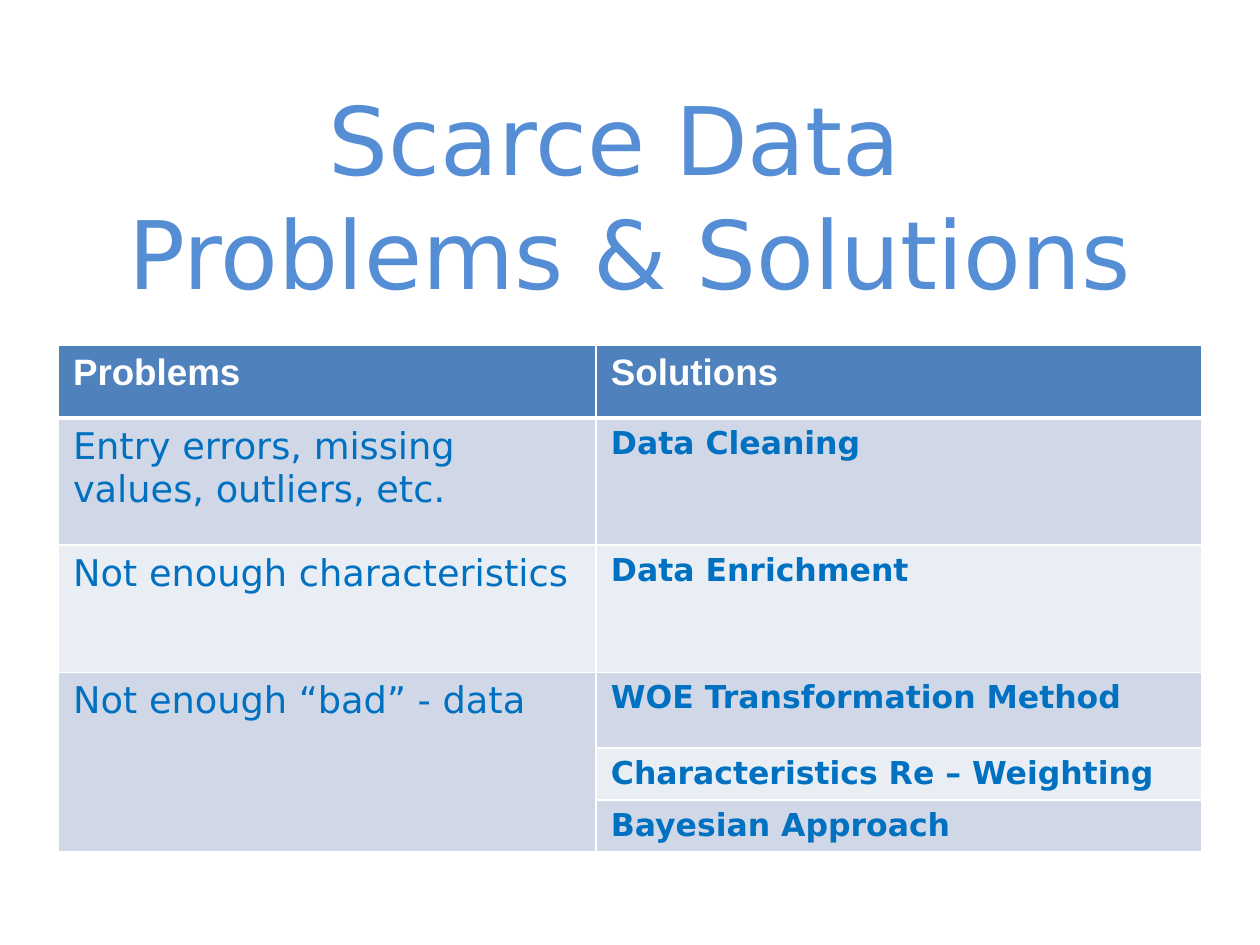
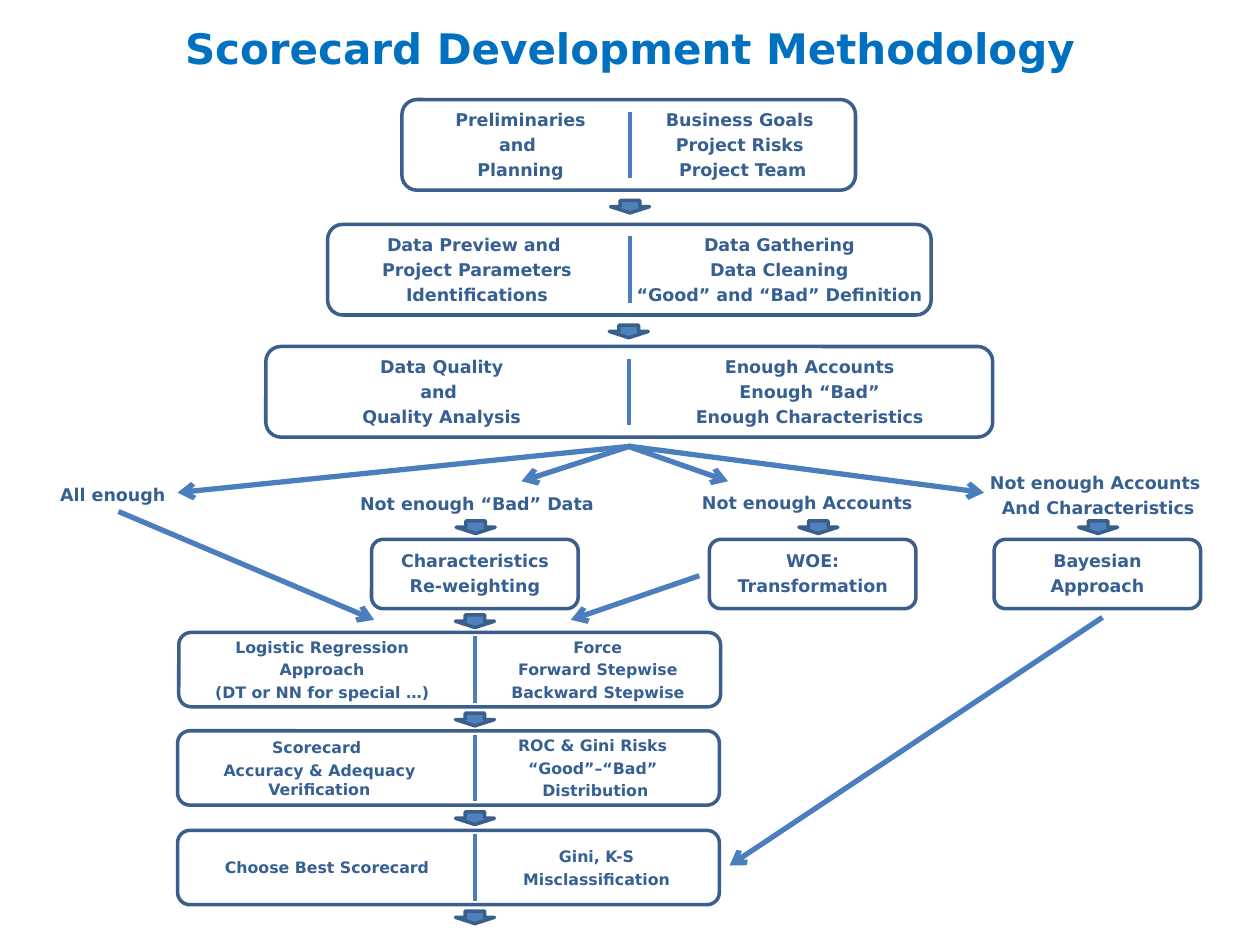
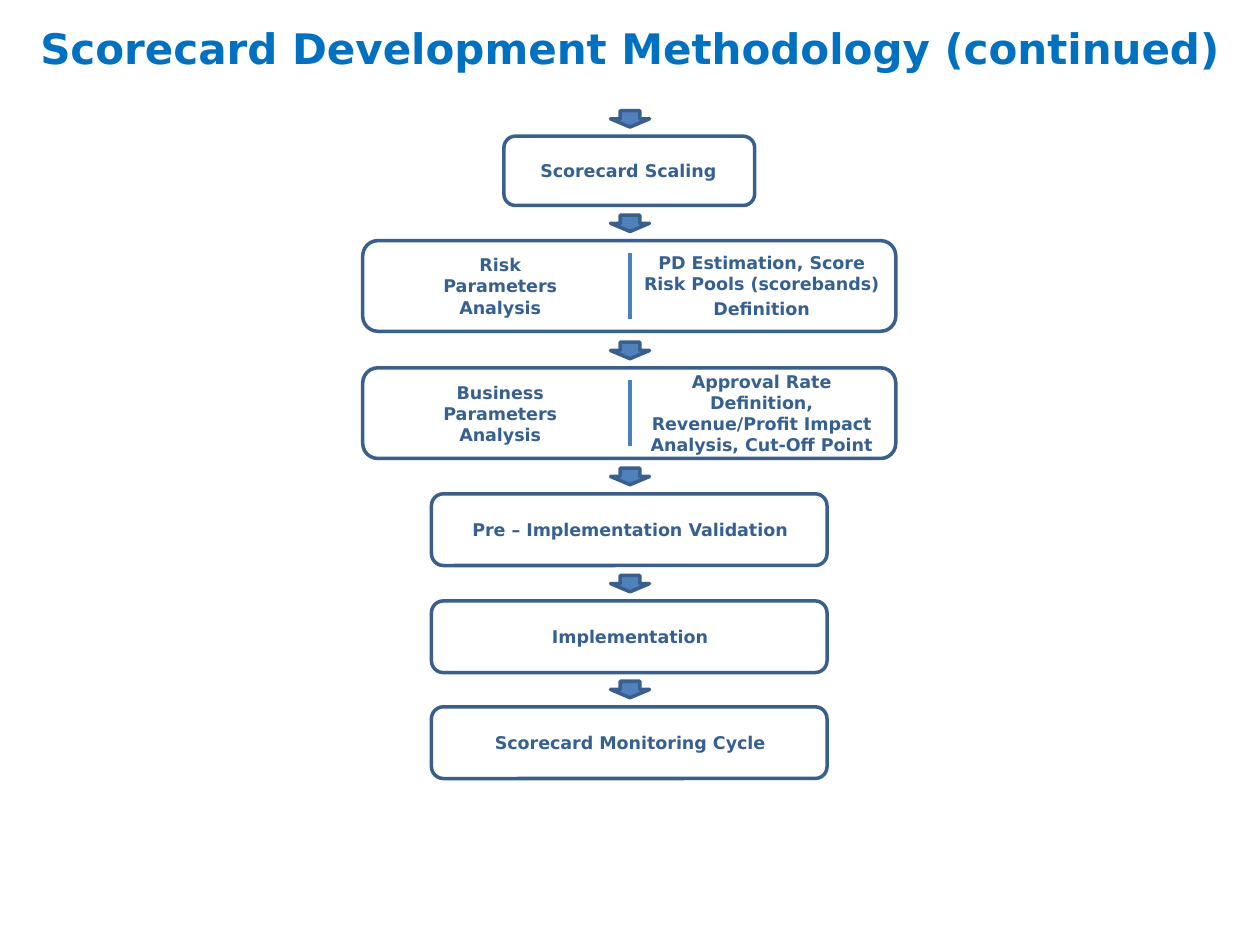
from lxml import etree
from pptx import Presentation
from pptx.dml.color import RGBColor
from pptx.enum.shapes import MSO_CONNECTOR, MSO_SHAPE
from pptx.enum.text import MSO_ANCHOR, MSO_AUTO_SIZE, PP_ALIGN
from pptx.oxml.ns import qn
from pptx.util import Pt

ROUNDED, DOWN = MSO_SHAPE.ROUNDED_RECTANGLE, MSO_SHAPE.DOWN_ARROW
STRAIGHT = MSO_CONNECTOR.STRAIGHT
CENTER, LEFT = PP_ALIGN.CENTER, PP_ALIGN.LEFT
TOP, MIDDLE = MSO_ANCHOR.TOP, MSO_ANCHOR.MIDDLE
NO_FIT = MSO_AUTO_SIZE.NONE

FONT, HEADER_FONT = "DejaVu Sans", "Arial"
COLORS = {
    "white": "FFFFFF", "cover": "558ED5", "heading": "0070C0",
    "label": "376092", "outline": "3A5F8C", "accent": "4F81BD",
    "link": "4B7EBC", "band_dark": "D0D8E8", "band_light": "E9EDF4",
}
SLIDE_W, SLIDE_H = 720, 540
DIVIDER_H = 38
ARROW_W = 22.3

# Slide 1
COVER_TITLE = ["Scarce Data ", "Problems & Solutions"]
REMEDIES = [
    ("Problems", "Solutions"),
    ("Entry errors, missing values, outliers, etc.", "Data Cleaning"),
    ("Not enough characteristics", "Data Enrichment"),
    ("Not enough “bad” - data", "WOE Transformation Method"),
    (None, "Characteristics Re – Weighting"),
    (None, "Bayesian Approach"),
]
COLUMN_WIDTHS = [307.4, 346.3]
ROW_HEIGHTS = [41.8, 72.7, 72.7, 43.4, 29.3, 29.3]

# Slide 2: frame (left, top, width, height), text size, divider x,
# gap from arrow top to frame, then (centre x, width, lines) of each half
METHOD_TITLE = "Scorecard Development Methodology"
STAGES = [
    ((229.7, 56.9, 259.2, 51.8), 10, 360, None,
     (297.4, 114, ["Preliminaries", "and ", "Planning"]),
     (424.4, 152, ["Business Goals ", "Project Risks ", "Project Team"])),
    ((187.2, 128.2, 344.9, 51.8), 10, 360, 13.7,
     (272.5, 152, ["Data Preview and ", "Project Parameters", "Identifications"]),
     (445.3, 194, ["Data Gathering", "Data Cleaning", "“Good” and “Bad” Definition"])),
    ((151.9, 198, 415.4, 51.8), 10, 359.3, 12.2,
     (252.4, 152, ["Data Quality", "and ", "Quality Analysis"]),
     (462.6, 194, ["Enough Accounts", "Enough “Bad”", "Enough Characteristics"])),
    ((102.2, 361.4, 309.6, 42.5), 9, 271.4, 10,
     (184, 152, ["Logistic Regression", "Approach", "(DT or NN for special …)"]),
     (341.6, 152, ["Force", "Forward Stepwise", "Backward Stepwise"])),
    ((101.5, 417.6, 309.6, 42.5), 9, 271.4, 10,
     (182.5, 152, ["Scorecard ", "Accuracy & Adequacy Verification"]),
     (340.2, 152, ["ROC & Gini Risks ", "“Good”–“Bad” ", "Distribution"])),
    ((101.5, 474.5, 309.6, 42.5), 9, 271.4, 10.5,
     (186.8, 152, ["Choose Best Scorecard"]),
     (340.9, 152, ["Gini, K-S", "Misclassification"])),
]
STAGE_ARROW_H = 7.2
NEXT_SLIDE_ARROW = (271.4, 520.6)

OUTCOMES = [  # centre x, centre y, lines
    (64.4, 282.6, ["All enough"]),
    (272.5, 287.6, ["Not enough “Bad” Data"]),
    (461.2, 286.9, ["Not enough Accounts"]),
    (627.5, 282.6, ["Not enough Accounts ", "And Characteristics"]),
]
TREATMENT_TOP, TREATMENT_W, TREATMENT_H = 308.2, 118.1, 39.6
TREATMENTS = [  # frame centre x, arrow centre x, lines
    (271.4, 271.8, ["Characteristics", "Re-weighting"]),
    (464.4, 467.6, ["WOE:", "Transformation"]),
    (627.1, 627.5, ["Bayesian", "Approach"]),
]
BRANCHES = [  # start, end
    ((360.5, 255), (101.5, 281.5)),
    ((360, 255), (298, 275)),
    ((358.8, 255), (416, 275)),
    ((359.5, 255), (562.3, 281.5)),
    ((67.7, 292.3), (213.8, 354.2)),
    ((399.6, 329), (326.2, 354.2)),
    ((630, 352.8), (416.9, 494.6)),
]

# Slide 3: top, width, height, then (centre x, width, lines) of each part
CONTINUED_TITLE = "Scorecard Development Methodology (continued)"
FLOW_X, FLOW_GAP, FLOW_ARROW_H = 360, 14.6, 9.4
FLOW = [
    (77.8, 143.3, 39.6, [(359, 146, ["Scorecard Scaling"])]),
    (137.5, 304.6, 51.8, [
        (285.8, 98, ["Risk Parameters Analysis"]),
        (435.2, 152, ["PD Estimation, Score Risk Pools (scorebands)", "Definition"])]),
    (210.2, 304.6, 51.8, [
        (285.8, 98, ["Business Parameters Analysis"]),
        (435.2, 152, ["Approval Rate Definition, Revenue/Profit Impact "
                      "Analysis, Cut-Off Point"])]),
    (282.2, 226.1, 41, [(360, 224, ["Pre – Implementation Validation"])]),
    (343.4, 226.1, 41, [(360, 224, ["Implementation"])]),
    (403.9, 226.1, 41, [(360, 224, ["Scorecard Monitoring Cycle"])]),
]


def rgb(name):
    return RGBColor.from_string(COLORS[name])


def write(frame, lines, size, color, bold=False, font=FONT, align=CENTER,
          anchor=MIDDLE, before=0):
    frame.word_wrap = True
    frame.vertical_anchor = anchor
    for i, line in enumerate(lines):
        paragraph = frame.paragraphs[0] if i == 0 else frame.add_paragraph()
        paragraph.alignment = align
        paragraph.space_before = Pt(before)
        run = paragraph.add_run()
        run.text = line
        run.font.size = Pt(size)
        run.font.name = font
        run.font.bold = bold
        run.font.color.rgb = rgb(color)


def add_titled_slide(prs, lines, top=5.8, height=42.5, size=24,
                     color="heading", bold=True):
    slide = prs.slides.add_slide(prs.slide_layouts[5])
    title = slide.shapes.title
    title.left, title.top = Pt(0), Pt(top)
    title.width, title.height = Pt(SLIDE_W), Pt(height)
    title.text_frame.auto_size = NO_FIT
    write(title.text_frame, lines, size, color, bold)
    return slide


def add_outlined(slide, preset, left, top, width, height, fill):
    shape = slide.shapes.add_shape(preset, Pt(left), Pt(top), Pt(width), Pt(height))
    shape.shadow.inherit = False
    shape.fill.solid()
    shape.fill.fore_color.rgb = rgb(fill)
    shape.line.color.rgb = rgb("outline")
    shape.line.width = Pt(2)


def add_frame(slide, left, top, width, height):
    add_outlined(slide, ROUNDED, left, top, width, height, "white")


def add_step_arrow(slide, center_x, top, height):
    add_outlined(slide, DOWN, center_x - ARROW_W / 2, top, ARROW_W, height, "accent")


def add_label(slide, center_x, center_y, width, lines, size=10):
    height = 40
    box = slide.shapes.add_textbox(Pt(center_x - width / 2), Pt(center_y - height / 2),
                                   Pt(width), Pt(height))
    write(box.text_frame, lines, size, "label", bold=True,
          before=round(size * 0.233, 1))


def add_link(slide, start, end, width, arrow=False):
    link = slide.shapes.add_connector(STRAIGHT, *(Pt(v) for v in (*start, *end)))
    link.line.color.rgb = rgb("link")
    link.line.width = Pt(width)
    properties = link._element.spPr
    if arrow:
        etree.SubElement(properties.find(qn("a:ln")), qn("a:tailEnd"), type="arrow")
    etree.SubElement(properties, qn("a:effectLst"))


def add_divider(slide, x, center_y):
    add_link(slide, (x, center_y - DIVIDER_H / 2), (x, center_y + DIVIDER_H / 2), 2.25)


def set_borders(cell, row):
    widths = {"lnL": 1, "lnR": 1, "lnT": 3 if row == 1 else 1, "lnB": 3 if row == 0 else 1}
    for side, width in widths.items():
        line = etree.SubElement(cell._tc.get_or_add_tcPr(), qn(f"a:{side}"), w=str(Pt(width)))
        fill = etree.SubElement(line, qn("a:solidFill"))
        etree.SubElement(fill, qn("a:srgbClr"), val=COLORS["white"])


def build_remedies(prs):
    slide = add_titled_slide(prs, COVER_TITLE, 53.3, 116, 54, "cover", False)
    table = slide.shapes.add_table(len(REMEDIES), 2, Pt(33.1), Pt(197),
                                   Pt(sum(COLUMN_WIDTHS)), Pt(sum(ROW_HEIGHTS))).table
    for column, width in zip(table.columns, COLUMN_WIDTHS):
        column.width = Pt(width)
    for r, (texts, height) in enumerate(zip(REMEDIES, ROW_HEIGHTS)):
        table.rows[r].height = Pt(height)
        band = "accent" if r == 0 else "band_dark" if r % 2 else "band_light"
        for c, text in enumerate(texts):
            cell = table.cell(r, c)
            set_borders(cell, r)
            cell.fill.solid()
            cell.fill.fore_color.rgb = rgb(band)
            cell.margin_left = cell.margin_right = Pt(8.64)
            cell.margin_top = cell.margin_bottom = Pt(4.32)
            if text is None:
                continue
            header = r == 0
            write(cell.text_frame, [text], 21 if header or c == 0 else 18,
                  "white" if header else "heading", header or c == 1,
                  HEADER_FONT if header else FONT, LEFT, TOP)
    table.cell(3, 0).merge(table.cell(5, 0))


def build_methodology(prs):
    slide = add_titled_slide(prs, [METHOD_TITLE])
    for frame, size, divider_x, arrow_gap, *halves in STAGES:
        top, height = frame[1], frame[3]
        center_y = top + height / 2
        add_frame(slide, *frame)
        add_divider(slide, divider_x, center_y)
        for center_x, width, lines in halves:
            add_label(slide, center_x, center_y, width, lines, size)
        if arrow_gap:
            add_step_arrow(slide, divider_x, top - arrow_gap, STAGE_ARROW_H)
    add_step_arrow(slide, *NEXT_SLIDE_ARROW, STAGE_ARROW_H)

    for center_x, center_y, lines in OUTCOMES:
        add_label(slide, center_x, center_y, 180 if center_x > 100 else 96, lines)
    for center_x, arrow_x, lines in TREATMENTS:
        add_frame(slide, center_x - TREATMENT_W / 2, TREATMENT_TOP, TREATMENT_W, TREATMENT_H)
        add_label(slide, center_x, TREATMENT_TOP + TREATMENT_H / 2 - 0.7, TREATMENT_W, lines)
        add_step_arrow(slide, arrow_x, TREATMENT_TOP - 10.5, STAGE_ARROW_H)
    for start, end in BRANCHES:
        add_link(slide, start, end, 3, arrow=True)


def build_continuation(prs):
    slide = add_titled_slide(prs, [CONTINUED_TITLE])
    for top, width, height, parts in FLOW:
        center_y = top + height / 2
        add_step_arrow(slide, FLOW_X, top - FLOW_GAP, FLOW_ARROW_H)
        add_frame(slide, FLOW_X - 0.4 - width / 2, top, width, height)
        for center_x, label_width, lines in parts:
            add_label(slide, center_x, center_y, label_width, lines)
        if len(parts) > 1:
            add_divider(slide, FLOW_X, center_y)


def main():
    prs = Presentation()
    prs.slide_width, prs.slide_height = Pt(SLIDE_W), Pt(SLIDE_H)
    build_remedies(prs)
    build_methodology(prs)
    build_continuation(prs)
    prs.save("out.pptx")


if __name__ == "__main__":
    main()
